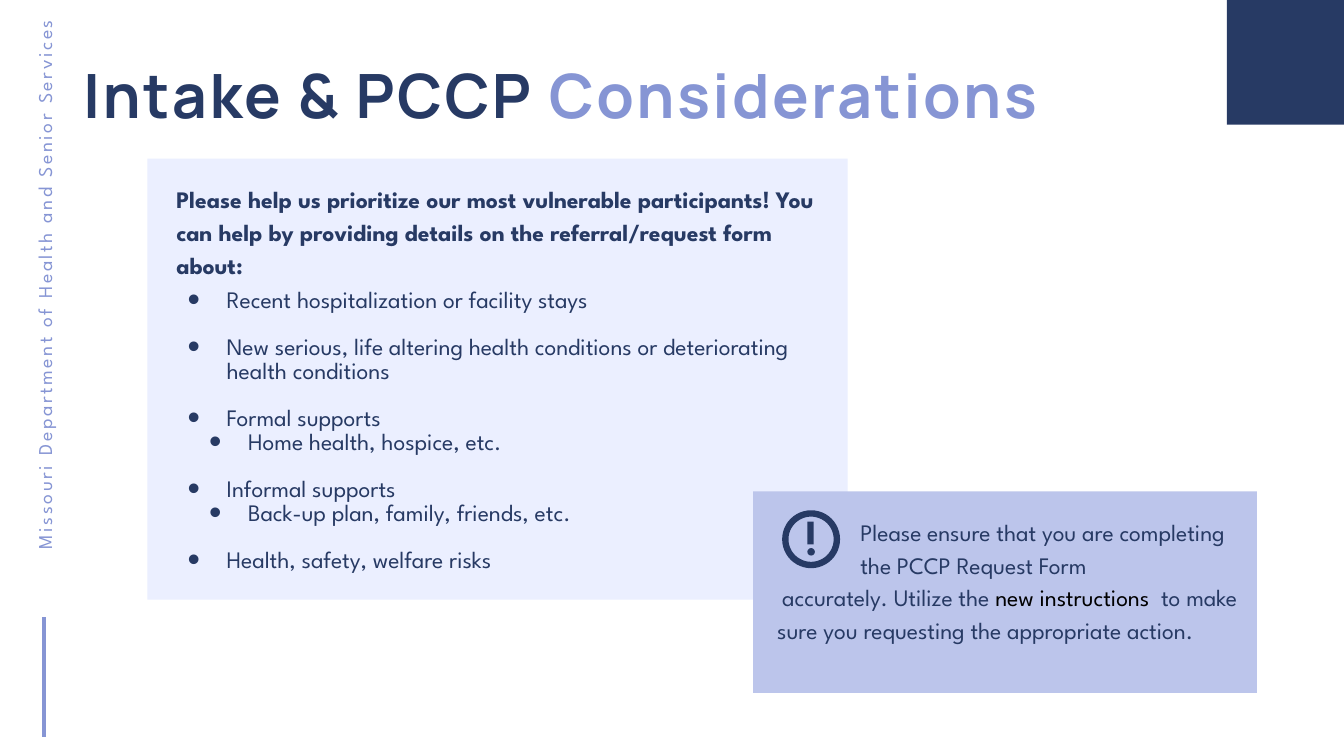
"""Build the Intake & PCCP Considerations slide."""
from pptx import Presentation
from pptx.dml.color import RGBColor
from pptx.enum.shapes import MSO_CONNECTOR, MSO_SHAPE as Shape
from pptx.enum.text import MSO_ANCHOR, MSO_AUTO_SIZE, PP_ALIGN as Align
from pptx.oxml.ns import qn
from pptx.util import Inches, Pt
from lxml.etree import SubElement

THEME = {
    "navy": "273A64", "periwinkle": "8695D4", "pale": "EBEFFF", "lilac": "BCC5EB",
    "black": "000000", "heading": "Manrope", "text": "League Spartan",
    "title_size": 34.9, "body_size": 13.5, "side_size": 11.2,
    "title_line": 38.4, "text_line": 18.9, "list_line": 13.5,
}

TITLE = [("Intake & PCCP ", "navy"), ("Considerations", "periwinkle")]
DEPARTMENT = [("Missouri Department of Health and Senior Services", "periwinkle")]
INTRO = [("Please help us prioritize our most vulnerable participants! You can help by "
          "providing details on the referral/request form about:", "navy")]
DETAILS = [
    ("Recent hospitalization or facility stays", []),
    ("New serious, life altering health conditions or deteriorating health conditions", []),
    ("Formal supports", ["Home health, hospice, etc."]),
    ("Informal supports", ["Back-up plan, family, friends, etc."]),
    ("Health, safety, welfare risks", []),
]
NOTICE_START = [("Please ensure that you are completing the PCCP Request Form", "navy")]
NOTICE_REST = [("accurately. Utilize the ", "navy"), ("new instructions ", "black"),
               (" to make sure you requesting the appropriate action.", "navy")]

PANELS = {
    "details": (1.17, 1.26, 5.56, 3.5, "pale"),
    "corner": (9.74, 0, 0.93, 0.99, "navy"),
    "notice": (5.98, 3.9, 4, 1.6, "lilac"),
}
ALERT_ICON = [
    (Shape.DONUT, 6.21, 4.05, 0.46, 0.46),
    (Shape.RECTANGLE, 6.41, 4.14, 0.05, 0.18),
    (Shape.OVAL, 6.41, 4.35, 0.06, 0.06),
]


def color(name):
    return RGBColor.from_string(THEME[name])


def place(shape, left, top, width, height):
    shape.left, shape.top = Inches(left), Inches(top)
    shape.width, shape.height = Inches(width), Inches(height)


def prepare(box, top_inset=0.02):
    frame = box.text_frame
    frame.word_wrap = True
    frame.auto_size = MSO_AUTO_SIZE.NONE
    frame.vertical_anchor = MSO_ANCHOR.TOP
    frame.margin_left = frame.margin_right = frame.margin_bottom = 0
    frame.margin_top = Inches(top_inset)
    return frame


def write(para, spans, size="body_size", line="text_line", font="text",
          bold=False, tracking=0, align=Align.LEFT):
    para.alignment = align
    para.line_spacing = Pt(THEME[line])
    para.space_before = para.space_after = Pt(0)
    for words, tint in spans:
        span = para.add_run()
        span.text = words
        span.font.name = THEME[font]
        span.font.size = Pt(THEME[size])
        span.font.bold = bold
        span.font.color.rgb = color(tint)
        if tracking:
            span.font._element.set("spc", str(int(tracking * 100)))


def indent(para, left, first, bullet=False):
    props = para._p.get_or_add_pPr()
    props.set("marL", str(Inches(left)))
    props.set("indent", str(Inches(first)))
    if bullet:
        SubElement(props, qn("a:buSzPct"), val="150000")
        SubElement(props, qn("a:buFont"), typeface="Arial")
        SubElement(props, qn("a:buChar"), char="•")


def add_text(slide, at, spans, **style):
    box = slide.shapes.add_textbox(*map(Inches, at))
    write(prepare(box).paragraphs[0], spans, **style)
    return box


def add_filled(slide, kind, at, tint):
    shape = slide.shapes.add_shape(kind, *map(Inches, at))
    shape.shadow.inherit = False
    shape.fill.solid()
    shape.fill.fore_color.rgb = color(tint)
    shape.line.fill.background()
    return shape


def fill_list(body):
    frame = prepare(body)
    rows = []
    for item, children in DETAILS:
        group = [(item, 0)] + [(child, 1) for child in children]
        rows += [(words, level, words == group[-1][0]) for words, level in group]
    for number, (words, level, closes_group) in enumerate(rows):
        para = frame.add_paragraph() if number else frame.paragraphs[0]
        para.level = level
        write(para, [(words, "navy")], line="list_line")
        if closes_group:
            para.space_after = Pt(THEME["list_line"])
        indent(para, 0.34 + 0.17 * level, -0.31, bullet=True)


def main():
    deck = Presentation()
    deck.slide_width, deck.slide_height = Inches(10.67), Inches(6)
    page = deck.slides.add_slide(deck.slide_layouts[1])
    title, body = page.shapes.title, page.placeholders[1]

    place(title, 0.66, 0.44, 8.31, 0.53)
    write(prepare(title, 0.06).paragraphs[0], TITLE, "title_size", "title_line",
          "heading", bold=True, tracking=1.4)

    rule = page.shapes.add_connector(MSO_CONNECTOR.STRAIGHT, Inches(0.35), Inches(4.9),
                                     Inches(0.35), Inches(5.85))
    rule.line.color.rgb = color("periwinkle")
    rule.line.width = Pt(1.8)
    SubElement(rule._element.spPr, qn("a:effectLst"))
    side = add_text(page, (-2.05, 2.48, 4.8, 0.16), DEPARTMENT, size="side_size",
                    line="side_size", tracking=1.5, align=Align.RIGHT)
    side.rotation = 270

    for name in ("details", "corner"):
        add_filled(page, Shape.RECTANGLE, PANELS[name][:4], PANELS[name][4])
    add_text(page, (1.4, 1.41, 5.16, 0.78), INTRO, bold=True)
    place(body, 1.46, 2.28, 5, 2.25)
    fill_list(body)
    body.element.getparent().append(body.element)

    add_filled(page, Shape.RECTANGLE, PANELS["notice"][:4], PANELS["notice"][4])
    add_text(page, (6.83, 4.05, 3.18, 0.52), NOTICE_START)
    for kind, *at in ALERT_ICON:
        part = add_filled(page, kind, at, "navy")
        if kind == Shape.DONUT:
            part.adjustments[0] = 0.11
    rest = add_text(page, (6.17, 4.57, 3.76, 0.78), NOTICE_REST)
    indent(rest.text_frame.paragraphs[0], 0, 0.04)

    deck.save("out.pptx")


if __name__ == "__main__":
    main()
